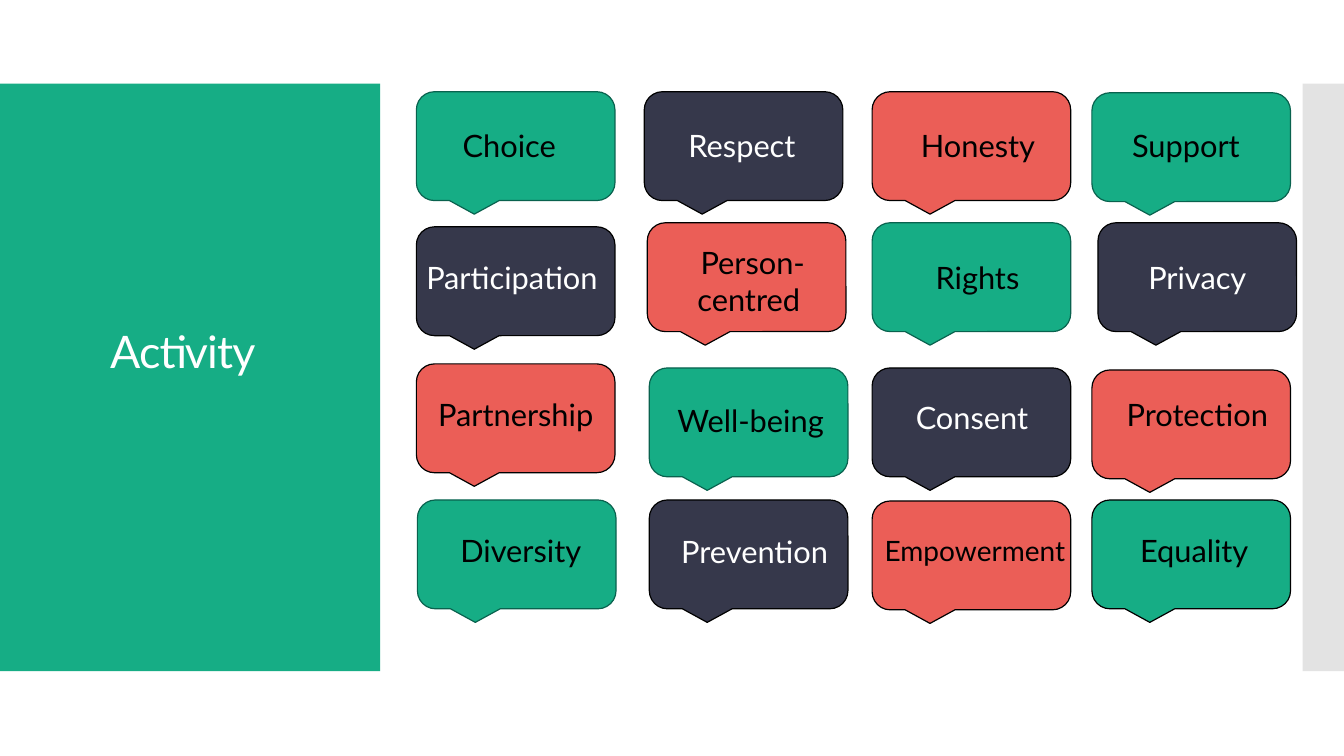
from pptx import Presentation
from pptx.dml.color import RGBColor
from pptx.enum.shapes import MSO_SHAPE
from pptx.enum.text import MSO_ANCHOR, MSO_AUTO_SIZE, PP_ALIGN
from pptx.oxml.ns import qn
from pptx.util import Inches, Pt
from lxml import etree

RECTANGLE = MSO_SHAPE.RECTANGLE
CALLOUT = MSO_SHAPE.ROUNDED_RECTANGULAR_CALLOUT
MIDDLE, TOP = MSO_ANCHOR.MIDDLE, MSO_ANCHOR.TOP
LEFT, CENTER = PP_ALIGN.LEFT, PP_ALIGN.CENTER
FIT_SHAPE = MSO_AUTO_SIZE.SHAPE_TO_FIT_TEXT

GREEN = RGBColor(0x16, 0xAD, 0x85)
DARK_GREEN = RGBColor(0x09, 0x62, 0x4E)
NAVY = RGBColor(0x36, 0x38, 0x4B)
RED = RGBColor(0xEB, 0x5E, 0x57)
GRAY = RGBColor(0xC8, 0xC8, 0xC8)
BLACK = RGBColor(0x00, 0x00, 0x00)
WHITE = RGBColor(0xFF, 0xFF, 0xFF)

CALLOUT_SIZE = (1.97, 1.08)
LABEL_SIZE = 22

# word, fill, outline, callout (left, top), label (left, top, width), alignment
VALUES = [
    ("Choice", GREEN, DARK_GREEN, (4.13, 0.91), (4.49, 1.21, 1.39), LEFT),
    ("Respect", NAVY, BLACK, (6.39, 0.91), (6.73, 1.21, 1.39), LEFT),
    ("Honesty", RED, BLACK, (8.65, 0.91), (8.95, 1.21, 1.5), CENTER),
    ("Support", GREEN, DARK_GREEN, (10.83, 0.92), (11.13, 1.21, 1.39), LEFT),
    ("Participation", NAVY, BLACK, (4.13, 2.25), (4.13, 2.52, 2.23), LEFT),
    ("Person-centred ", RED, BLACK, (6.42, 2.21), (6.77, 2.37, 1.39), CENTER),
    ("Rights", GREEN, DARK_GREEN, (8.65, 2.21), (9, 2.52, 1.39), CENTER),
    ("Privacy", NAVY, BLACK, (10.89, 2.21), (11.18, 2.52, 1.39), CENTER),
    ("Partnership", RED, BLACK, (4.13, 3.61), (4.11, 3.88, 2.01), CENTER),
    ("Well-being", GREEN, DARK_GREEN, (6.44, 3.65), (6.31, 3.94, 2.27), CENTER),
    ("Consent", NAVY, BLACK, (8.65, 3.65), (8.89, 3.91, 1.5), CENTER),
    ("Protection", RED, BLACK, (10.83, 3.67), (10.94, 3.88, 1.87), CENTER),
    ("Diversity", GREEN, DARK_GREEN, (4.14, 4.96), (4.23, 5.23, 1.87), CENTER),
    ("Prevention", NAVY, BLACK, (6.44, 4.96), (6.55, 5.24, 1.87), CENTER),
    ("Empowerment", RED, BLACK, (8.65, 4.97), (8.4, 5.24, 2.54), CENTER),
    ("Equality", GREEN, BLACK, (10.83, 4.96), (10.91, 5.23, 1.87), CENTER),
]
LABEL_SIZES = {"Empowerment": 20}
LABEL_HEIGHTS = {"Person-centred ": 0.84, "Empowerment": 0.44}


class SlideBuilder:
    """Holds the current slide and its style."""

    font_name = "Lato"
    line_width = Pt(0.85)

    def __init__(self, slide):
        self.slide = slide

    def shape(self, kind, left, top, width, height, fill, outline=None, opacity=None):
        shape = self.slide.shapes.add_shape(
            kind, Inches(left), Inches(top), Inches(width), Inches(height))
        shape.shadow.inherit = False
        shape.fill.solid()
        shape.fill.fore_color.rgb = fill
        if outline is None:
            shape.line.fill.background()
        else:
            shape.line.color.rgb = outline
            shape.line.width = self.line_width
        if opacity is not None:
            color = shape.fill._xPr.find(qn("a:solidFill"))[0]
            etree.SubElement(color, qn("a:alpha")).set("val", str(opacity * 1000))
        return shape

    def text(self, words, left, top, width, height, size, color,
             alignment=CENTER, anchor=TOP, grow=True):
        box = self.slide.shapes.add_textbox(
            Inches(left), Inches(top), Inches(width), Inches(height))
        frame = box.text_frame
        frame.word_wrap = True
        frame.vertical_anchor = anchor
        if grow:
            frame.auto_size = FIT_SHAPE
        paragraph = frame.paragraphs[0]
        paragraph.text = words
        paragraph.alignment = alignment
        paragraph.font.name = self.font_name
        paragraph.font.size = Pt(size)
        paragraph.font.color.rgb = color
        return paragraph

    def title(self, words, left, top, width, height):
        paragraph = self.text(words, left, top, width, height, 32, WHITE,
                              anchor=MIDDLE, grow=False)
        paragraph.line_spacing = 0.9
        # Slightly tightened letters
        paragraph.runs[0]._r.get_or_add_rPr().set("spc", "-60")


def main():
    presentation = Presentation()
    presentation.slide_width = Inches(13.33)
    presentation.slide_height = Inches(7.5)
    slide = presentation.slides.add_slide(presentation.slide_layouts[6])
    builder = SlideBuilder(slide)

    # Side panels and title
    builder.shape(RECTANGLE, 0, 0.83, 3.77, 5.83, GREEN)
    builder.shape(RECTANGLE, 12.92, 0.83, 0.41, 5.83, GRAY, opacity=50)
    builder.title("Activity ", 0.25, 1, 3.22, 5.03)

    # Speech bubbles with their words
    for word, fill, outline, position, (left, top, width), alignment in VALUES:
        builder.shape(CALLOUT, *position, *CALLOUT_SIZE, fill, outline)
        builder.text(word, left, top, width, LABEL_HEIGHTS.get(word, 0.47),
                     LABEL_SIZES.get(word, LABEL_SIZE),
                     WHITE if fill == NAVY else BLACK, alignment)

    presentation.save("out.pptx")


if __name__ == "__main__":
    main()
